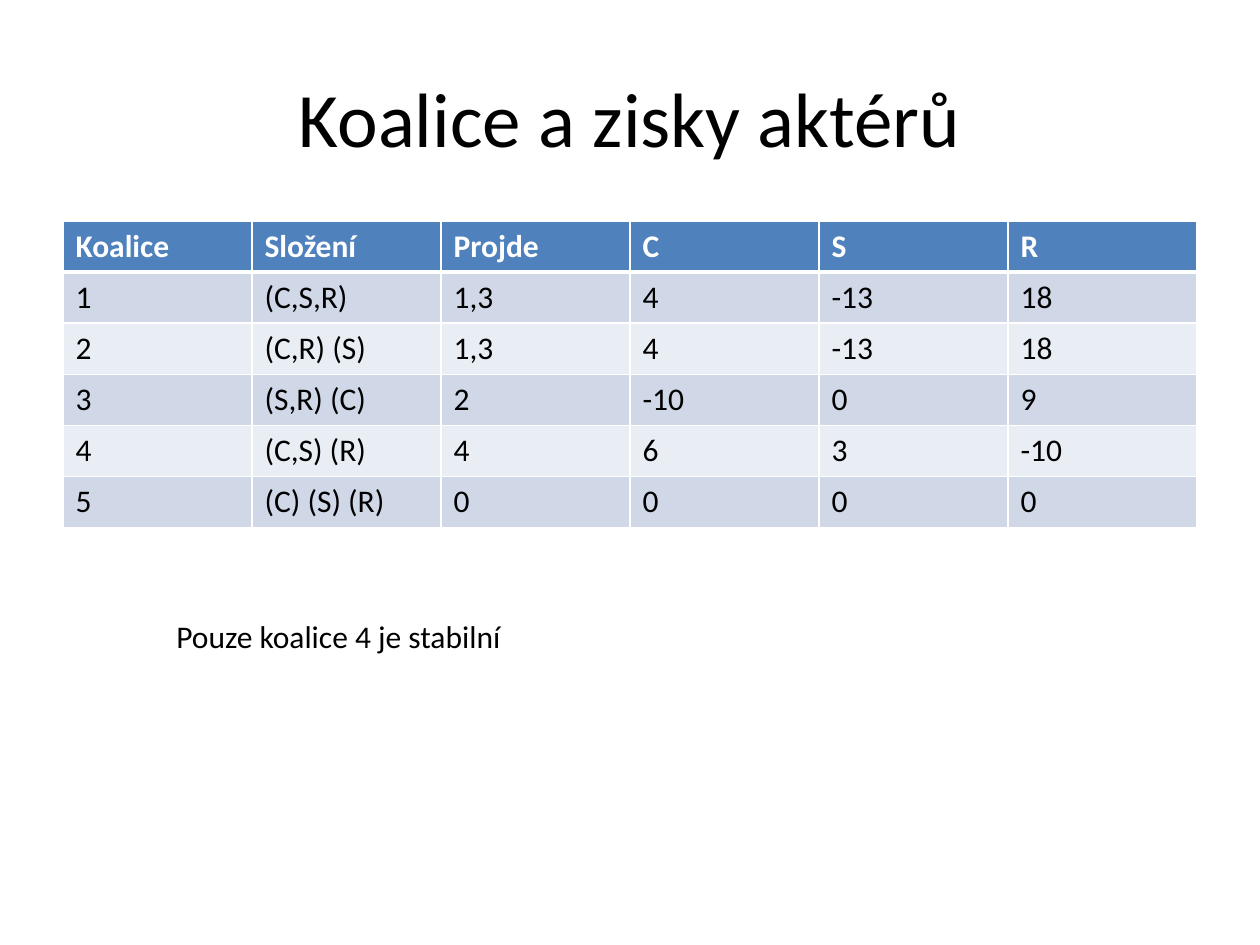
from dataclasses import dataclass

from lxml import etree
from pptx import Presentation
from pptx.dml.color import RGBColor
from pptx.enum.text import MSO_ANCHOR, PP_ALIGN
from pptx.oxml.ns import qn
from pptx.util import Pt

LEFT = PP_ALIGN.LEFT
CENTER = PP_ALIGN.CENTER
TOP = MSO_ANCHOR.TOP
MIDDLE = MSO_ANCHOR.MIDDLE

PX_PER_INCH = 126
TITLE_ONLY = 5
ROW_HEIGHT = 51

HEADINGS = ["Koalice", "Složení", "Projde", "C", "S", "R"]
COALITIONS = [
    ["1", "(C,S,R)", "1,3", "4", "-13", "18"],
    ["2", "(C,R) (S)", "1,3", "4", "-13", "18"],
    ["3", "(S,R) (C)", "2", "-10", "0", "9"],
    ["4", "(C,S) (R)", "4", "6", "3", "-10"],
    ["5", "(C) (S) (R)", "0", "0", "0", "0"],
]


@dataclass(frozen=True)
class Theme:
    font: str = "Calibri"
    title_size: int = 44
    body_size: int = 18
    ink: str = "000000"
    paper: str = "FFFFFF"
    header: str = "4F81BD"
    bands: tuple = ("D0D8E8", "E9EDF4")
    rule: int = 1
    header_rule: int = 3


THEME = Theme()


def px(length):
    return round(length * 914400 / PX_PER_INCH)


def write(frame, text, size=THEME.body_size, color=THEME.ink, bold=False,
          align=LEFT, anchor=TOP):
    frame.word_wrap = True
    frame.vertical_anchor = anchor
    paragraph = frame.paragraphs[0]
    paragraph.alignment = align
    run = paragraph.add_run()
    run.text = text
    run.font.name = THEME.font
    run.font.size = Pt(size)
    run.font.bold = bold
    run.font.color.rgb = RGBColor.from_string(color)


def set_borders(cell, **widths):
    properties = cell._tc.get_or_add_tcPr()
    for side in ("L", "R", "T", "B"):
        width = Pt(widths.get(side, THEME.rule))
        line = etree.SubElement(properties, qn(f"a:ln{side}"), w=str(width))
        fill = etree.SubElement(line, qn("a:solidFill"))
        etree.SubElement(fill, qn("a:srgbClr"), val=THEME.paper)


def fill_cell(cell, color):
    cell.fill.solid()
    cell.fill.fore_color.rgb = RGBColor.from_string(color)


def add_title(slide, text, left, top, width, height):
    title = slide.shapes.title
    title.left, title.top = px(left), px(top)
    title.width, title.height = px(width), px(height)
    write(title.text_frame, text, size=THEME.title_size, align=CENTER,
          anchor=MIDDLE)


def add_payoff_table(slide, left, top, width):
    rows = [HEADINGS] + COALITIONS
    table = slide.shapes.add_table(
        len(rows), len(HEADINGS), px(left), px(top), px(width),
        px(ROW_HEIGHT * len(rows))).table
    for row_index, values in enumerate(rows):
        is_header = row_index == 0
        background = THEME.header if is_header else THEME.bands[(row_index - 1) % 2]
        color = THEME.paper if is_header else THEME.ink
        edges = {0: {"B": THEME.header_rule}, 1: {"T": THEME.header_rule}}
        for column_index, value in enumerate(values):
            cell = table.cell(row_index, column_index)
            write(cell.text_frame, value, color=color, bold=is_header)
            set_borders(cell, **edges.get(row_index, {}))
            fill_cell(cell, background)


def add_note(slide, text, left, top, width, height):
    note = slide.shapes.add_textbox(px(left), px(top), px(width), px(height))
    write(note.text_frame, text)


def main():
    presentation = Presentation()
    presentation.slide_width, presentation.slide_height = px(1260), px(945)
    slide = presentation.slides.add_slide(presentation.slide_layouts[TITLE_ONLY])
    add_title(slide, "Koalice a zisky aktérů", 63, 38, 1134, 158)
    add_payoff_table(slide, 63, 221, 1134)
    add_note(slide, "Pouze koalice 4 je stabilní", 164, 611, 983, 50)
    presentation.save("out.pptx")


if __name__ == "__main__":
    main()
